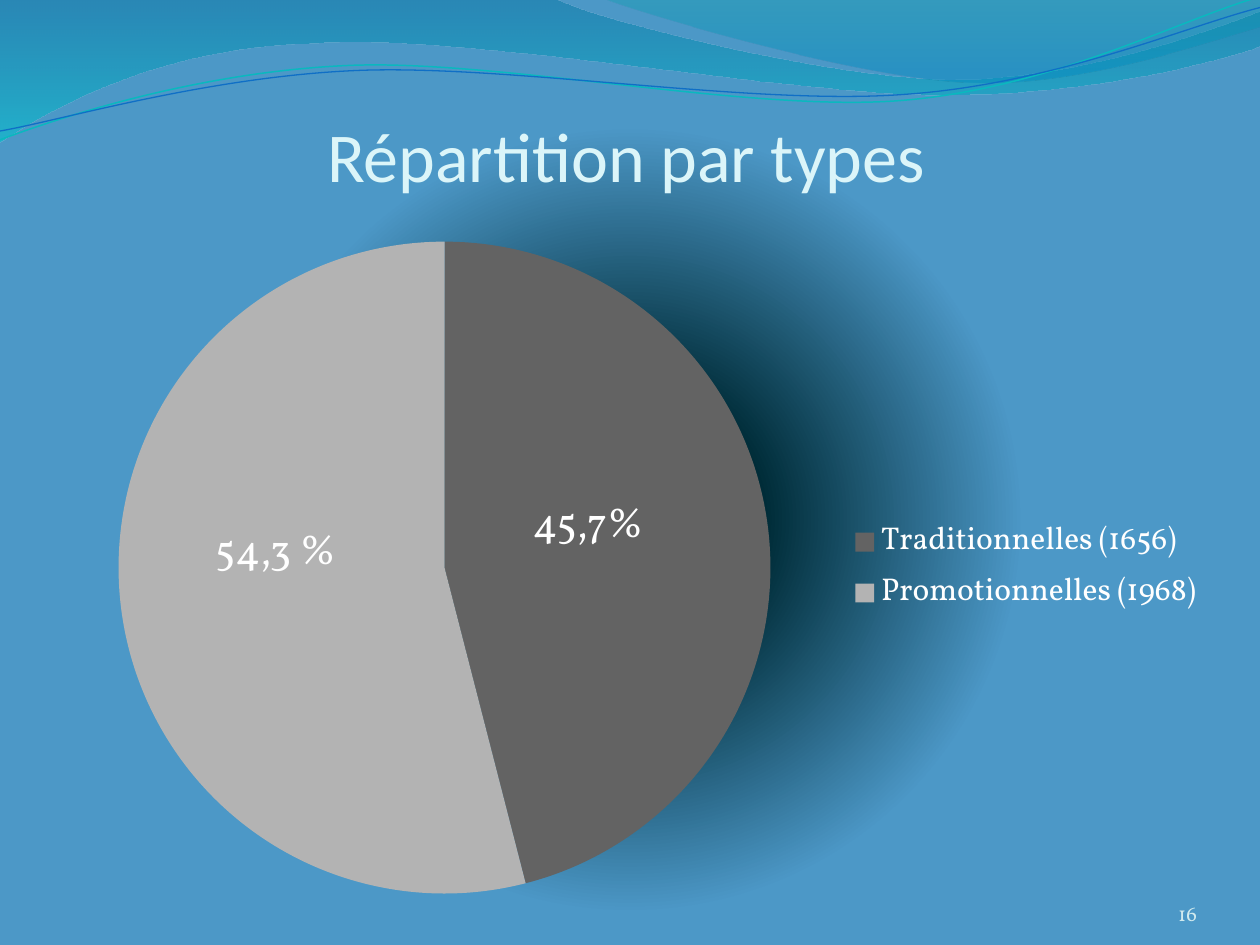
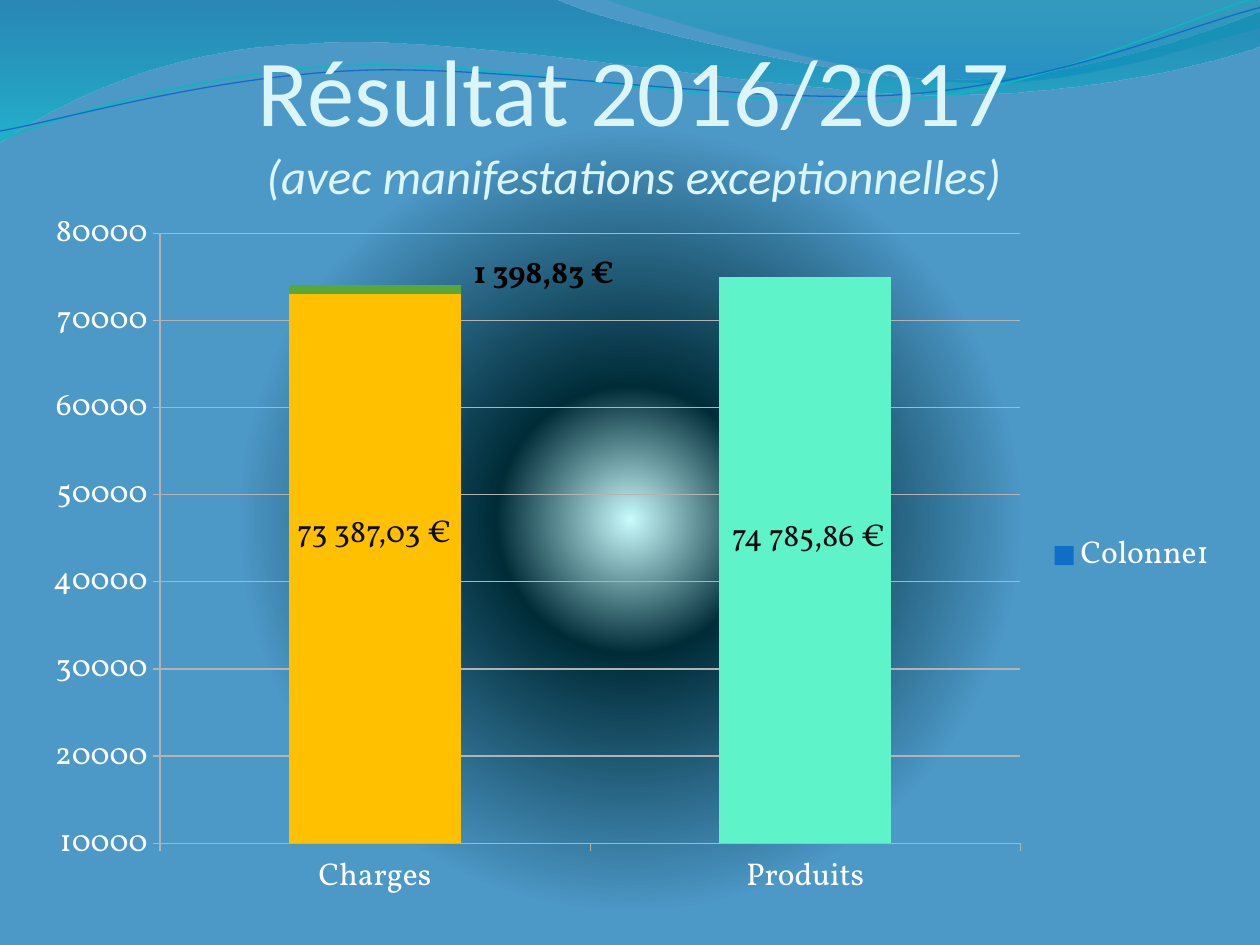
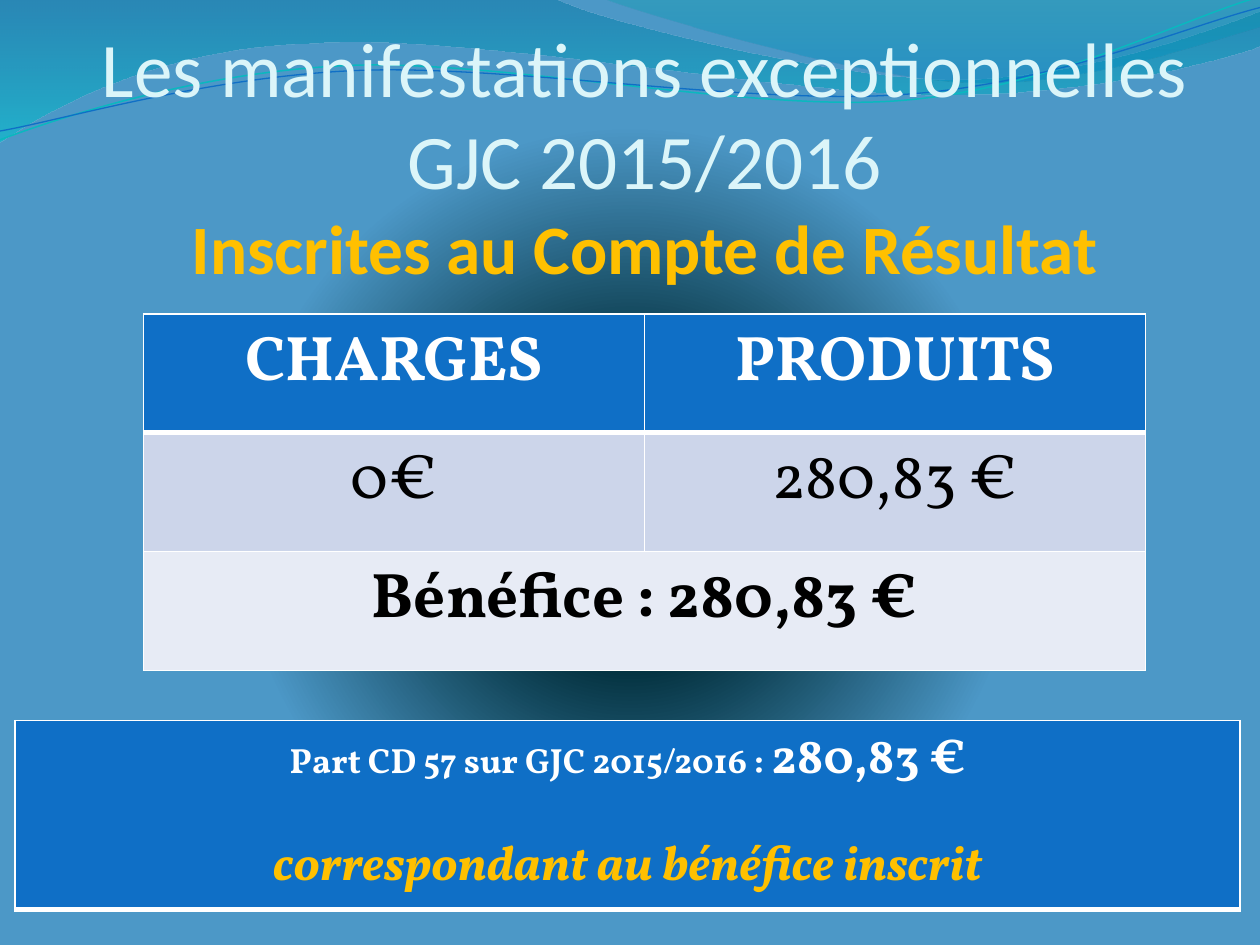
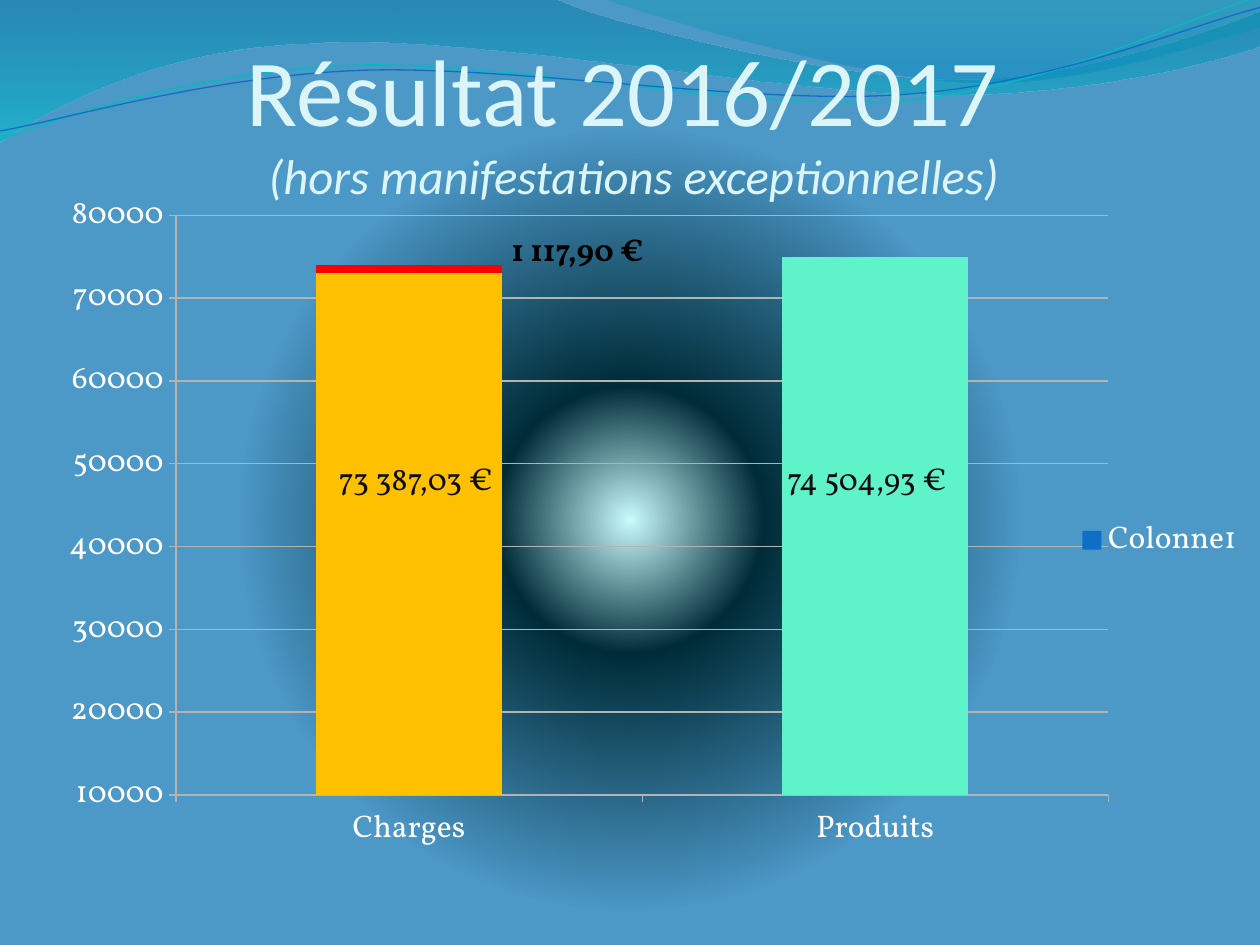
from lxml.etree import SubElement
from pptx import Presentation
from pptx.chart.data import CategoryChartData
from pptx.dml.color import RGBColor
from pptx.enum.chart import XL_CHART_TYPE, XL_LEGEND_POSITION, XL_TICK_MARK
from pptx.enum.text import MSO_ANCHOR, MSO_AUTO_SIZE, PP_ALIGN
from pptx.oxml.ns import qn
from pptx.util import Inches, Pt

HEADING_FONT = "Calibri"
BODY_FONT = "Vollkorn"
PALE = "DBF5F9"
WHITE = "FFFFFF"
BLACK = "000000"
NEAR_BLACK = "0D0D0D"
BLUE = "0F6FC6"
GOLD = "FFC000"
MINT = "5FF3CA"
GREEN = "55A839"
RED = "FF0000"
GRID_GREY = "B3B3B3"
PIE_GREYS = ["636363", "B3B3B3"]

BACKGROUND_STOPS = [(0, "C9FAFC", 100), (17, "002C38", 100), (50, "4C98C7", 100)]
BANDS = [
    ((0, 0), [
        [(4.4, -0.01)],
        [(4.76, 0.17), (6.64, 0.63), (7.58, 0.63)],
        [(8.53, 0.63), (9.58, 0.26), (10, 0.09)],
        [(10.01, 0.36)],
        [(9.83, 0.44), (8.7, 0.76), (7.46, 0.75)],
        [(6.22, 0.75), (3.82, 0.28), (2.57, 0.34)],
        [(1.29, 0.36), (0.46, 0.83), (-0.01, 1.13)],
    ], [(0, "0074A1", 45), (100, "00C6CF", 55)]),
    ((4.79, -0.01), [
        [(5.09, 0.11), (6.82, 0.62), (7.69, 0.65)],
        [(8.56, 0.69), (9.61, 0.32), (10, 0.21)],
        [(10, 0)],
    ], [(0, "00A1A9", 30), (80, "008BBF", 45)]),
]
WAVES = [
    ((0, 1.11), [
        [(0.48, 0.93), (1.58, 0.57), (2.77, 0.52)],
        [(3.95, 0.47), (5.93, 0.89), (7.13, 0.8)],
        [(8.33, 0.71), (9.38, 0.15), (9.98, -0.02)],
    ], "0AB8BF", 0.85),
    ((0, 1.04), [
        [(0.47, 0.96), (1.64, 0.61), (2.83, 0.56)],
        [(4.03, 0.51), (5.97, 0.84), (7.17, 0.75)],
        [(8.36, 0.67), (9.41, 0.21), (10, 0.06)],
    ], BLUE, 0.75),
]


def color(hex_string):
    return RGBColor.from_string(hex_string)


def box(left, top, width, height):
    return Inches(left), Inches(top), Inches(width), Inches(height)


def fill_solid(fill, hex_string):
    fill.solid()
    fill.fore_color.rgb = color(hex_string)


def fill_gradient(fill, properties, stops, focus=None):
    fill.solid()
    solid = properties.find(qn("a:solidFill"))
    gradient = properties.makeelement(qn("a:gradFill"), {"rotWithShape": "1"})
    stop_list = SubElement(gradient, qn("a:gsLst"))
    for position, hex_string, opacity in stops:
        stop = SubElement(stop_list, qn("a:gs"), pos=str(position * 1000))
        tint = SubElement(stop, qn("a:srgbClr"), val=hex_string)
        if opacity < 100:
            SubElement(tint, qn("a:alpha"), val=str(opacity * 1000))
    if focus:
        radial = SubElement(gradient, qn("a:path"), {"path": "circle"})
        edges = {side: str(value * 1000) for side, value in zip("ltrb", focus)}
        SubElement(radial, qn("a:fillToRect"), edges)
    else:
        SubElement(gradient, qn("a:lin"), ang="5400000", scaled="1")
    properties.replace(solid, gradient)


def add_curve(slide, start, segments, close):
    builder = slide.shapes.build_freeform(Inches(start[0]), Inches(start[1]))
    points = [(Inches(x), Inches(y)) for segment in segments for x, y in segment]
    builder.add_line_segments(points, close=close)
    shape = builder.convert_to_shape()
    shape.shadow.inherit = False
    lines = iter(shape.element.xpath(".//a:lnTo"))
    for segment in segments:
        steps = [next(lines) for _ in segment]
        if len(steps) == 3:
            outline = steps[0].getparent()
            curve = outline.makeelement(qn("a:cubicBezTo"), {})
            outline.replace(steps[0], curve)
            for step in steps:
                curve.append(step[0])
            for step in steps[1:]:
                outline.remove(step)
    return shape


def decorate_master(presentation, slide):
    master = presentation.slide_master
    fill = master.background.fill
    fill.solid()
    properties = master.element.xpath(".//p:bgPr")[0]
    fill_gradient(fill, properties, BACKGROUND_STOPS, (10, 110, 10, 100))
    shapes = []
    for start, segments, stops in BANDS:
        band = add_curve(slide, start, segments, True)
        fill_gradient(band.fill, band.element.spPr, stops)
        band.line.fill.background()
        shapes.append(band)
    for start, segments, hex_string, width in WAVES:
        wave = add_curve(slide, start, segments, False)
        wave.fill.background()
        wave.line.color.rgb = color(hex_string)
        wave.line.width = Pt(width)
        shapes.append(wave)
    for index, shape in enumerate(shapes):
        shape.element.xpath(".//p:cNvPr")[0].set("id", str(100 + index))
        master.shapes.element.insert(2 + index, shape.element)


def add_run(paragraph, text, size, hex_string, font=BODY_FONT, bold=False, italic=False):
    run = paragraph.add_run()
    run.text = text
    run.font.name = font
    run.font.size = Pt(size)
    run.font.bold = bold
    run.font.italic = italic
    run.font.color.rgb = color(hex_string)


def set_title(slide, left, top, lines):
    title = slide.shapes.title
    title.left, title.top, title.width, title.height = box(left, top, 9, 1.25)
    frame = title.text_frame
    frame.auto_size = MSO_AUTO_SIZE.NONE
    frame.word_wrap = True
    frame.vertical_anchor = MSO_ANCHOR.BOTTOM
    frame.margin_left = frame.margin_right = frame.margin_bottom = 0
    frame.margin_top = Inches(0.05)
    paragraph = frame.paragraphs[0]
    paragraph.alignment = PP_ALIGN.CENTER
    for index, (text, size, hex_string, style) in enumerate(lines):
        if index:
            paragraph.add_line_break()
        add_run(paragraph, text, size, hex_string, HEADING_FONT, **style)


def add_label(slide, position, text, size, hex_string, bold=False, alignment=PP_ALIGN.LEFT):
    frame = slide.shapes.add_textbox(*box(*position)).text_frame
    frame.word_wrap = True
    frame.auto_size = MSO_AUTO_SIZE.SHAPE_TO_FIT_TEXT
    paragraph = frame.paragraphs[0]
    paragraph.alignment = alignment
    add_run(paragraph, text, size, hex_string, bold=bold)


def add_page_number(slide, number):
    frame = slide.shapes.add_textbox(*box(8.67, 6.95, 0.83, 0.4)).text_frame
    frame.word_wrap = True
    frame.vertical_anchor = MSO_ANCHOR.BOTTOM
    frame.margin_left = frame.margin_right = frame.margin_top = frame.margin_bottom = 0
    frame.paragraphs[0].alignment = PP_ALIGN.RIGHT
    add_run(frame.paragraphs[0], number, 12, "D1EAEE")


def add_chart(slide, chart_type, position, categories, series):
    data = CategoryChartData()
    data.categories = categories
    for name, values in series:
        data.add_series(name, values)
    chart = slide.shapes.add_chart(chart_type, *box(*position), data).chart
    chart.has_title = False
    chart.font.name = BODY_FONT
    chart.font.size = Pt(18)
    chart.font.color.rgb = color(WHITE)
    chart.has_legend = True
    chart.legend.position = XL_LEGEND_POSITION.RIGHT
    chart.legend.include_in_layout = False
    return chart


def color_points(series, hex_strings):
    for index, hex_string in enumerate(hex_strings):
        fill_solid(series.points[index].format.fill, hex_string)


def add_pie(slide):
    categories = ["Traditionnelles (1656)", "Promotionnelles (1968)"]
    chart = add_chart(slide, XL_CHART_TYPE.PIE, (0.35, 1.78, 9.31, 5.45),
                      categories, [("Types", [46, 54])])
    color_points(chart.plots[0].series[0], PIE_GREYS)


def find_legend(chart):
    return chart.element.xpath(".//c:legend")[0]


def hide_legend_entry(chart, index):
    legend = find_legend(chart)
    hidden = legend.makeelement(qn("c:legendEntry"), {})
    SubElement(hidden, qn("c:idx"), val=str(index))
    SubElement(hidden, qn("c:delete"), val="1")
    legend.find(qn("c:legendPos")).addnext(hidden)


def make_layout(parent, settings):
    for layout in parent.findall(qn("c:layout")):
        parent.remove(layout)
    layout = parent.makeelement(qn("c:layout"), {})
    manual = SubElement(layout, qn("c:manualLayout"))
    for name, value in settings:
        SubElement(manual, qn("c:" + name), val=str(value))
    return layout


def set_plot_layout(chart, left, top, width, height):
    plot_area = chart.element.xpath(".//c:plotArea")[0]
    settings = [("layoutTarget", "inner"), ("xMode", "edge"), ("yMode", "edge"),
                ("x", left), ("y", top), ("w", width), ("h", height)]
    plot_area.insert(0, make_layout(plot_area, settings))


def set_legend_layout(chart, left, top):
    legend = find_legend(chart)
    settings = [("xMode", "edge"), ("yMode", "edge"), ("x", left), ("y", top)]
    layout = make_layout(legend, settings)
    legend.find(qn("c:legendEntry")).addnext(layout)


def add_result_columns(slide, position, totals, differences, difference_color):
    chart = add_chart(slide, XL_CHART_TYPE.COLUMN_STACKED, position, ["Charges", "Produits"],
                      [("Colonne1", totals), ("Différence", differences)])
    plot = chart.plots[0]
    plot.gap_width = 150
    plot.overlap = 100
    plot.vary_by_categories = False
    for series, hex_string in zip(plot.series, [BLUE, difference_color]):
        fill_solid(series.format.fill, hex_string)
        series.invert_if_negative = False
    color_points(plot.series[0], [GOLD, MINT])
    value_axis = chart.value_axis
    value_axis.minimum_scale = 10000
    value_axis.maximum_scale = 80000
    value_axis.major_unit = 10000
    value_axis.has_major_gridlines = True
    for axis in (chart.category_axis, value_axis):
        axis.major_tick_mark = XL_TICK_MARK.OUTSIDE
        axis.minor_tick_mark = XL_TICK_MARK.NONE
        axis.tick_labels.number_format = "General"
        axis.tick_labels.number_format_is_linked = False
    for line in (value_axis.major_gridlines.format.line, value_axis.format.line,
                 chart.category_axis.format.line):
        line.color.rgb = color(GRID_GREY)
        line.width = Pt(0.75)
    hide_legend_entry(chart, 1)
    return chart


def style_cell(cell, hex_string, top=1, bottom=1):
    properties = cell._tc.get_or_add_tcPr()
    for side, width in (("L", 1), ("R", 1), ("T", top), ("B", bottom)):
        line = SubElement(properties, qn("a:ln" + side), w=str(Pt(width)))
        fill = SubElement(line, qn("a:solidFill"))
        SubElement(fill, qn("a:srgbClr"), val=WHITE)
    fill_solid(cell.fill, hex_string)


def add_balance_table(slide):
    table = slide.shapes.add_table(3, 2, *box(1.14, 2.49, 7.95, 2.83)).table
    rows = [
        (["CHARGES", "PRODUITS"], BLUE, WHITE, True, 1, 3),
        (["0€", "280,83 €"], "CCD5EA", BLACK, False, 3, 1),
        (["Bénéfice : 280,83 €", ""], "E7EBF5", BLACK, True, 1, 1),
    ]
    table.cell(2, 0).merge(table.cell(2, 1))
    for row, (texts, fill, font_color, bold, top, bottom) in enumerate(rows):
        for column, text in enumerate(texts):
            cell = table.cell(row, column)
            style_cell(cell, fill, top, bottom)
            if text:
                paragraph = cell.text_frame.paragraphs[0]
                paragraph.alignment = PP_ALIGN.CENTER
                add_run(paragraph, text, 36, font_color, bold=bold)


def add_share_table(slide):
    table = slide.shapes.add_table(1, 1, *box(0.12, 5.72, 9.72, 1.5)).table
    cell = table.cell(0, 0)
    style_cell(cell, BLUE, bottom=3)
    share = cell.text_frame.paragraphs[0]
    add_run(share, "Part CD 57 sur GJC 2015/2016 : ", 20, WHITE, bold=True)
    add_run(share, "280,83 €", 28, WHITE, bold=True)
    origin = cell.text_frame.add_paragraph()
    origin.space_before = Pt(22)
    add_run(origin, "correspondant au bénéfice inscrit", 28, GOLD, bold=True, italic=True)
    for paragraph in (share, origin):
        paragraph.alignment = PP_ALIGN.CENTER


def build_types_slide(slide):
    add_pie(slide)
    set_title(slide, 0.47, 0.31, [("Répartition par types", 40, PALE, {})])
    add_label(slide, (1.61, 4.1, 1.42, 0.5), "54,3 %", 24, WHITE)
    add_label(slide, (4.13, 3.88, 1.3, 0.5), "45,7%", 24, WHITE)
    add_page_number(slide, "16")


def set_result_title(slide, heading, subtitle):
    set_title(slide, 0.53, 0.37, [(heading, 54, PALE, {}),
                                  (subtitle, 27.9, PALE, {"italic": True})])


def build_full_result_slide(slide):
    set_result_title(slide, "Résultat 2016/2017", "(avec manifestations exceptionnelles)")
    add_result_columns(slide, (0.23, 1.56, 9.53, 5.7), [73000, 75000], [1000, -75000], GREEN)
    add_label(slide, (3.66, 1.95, 1.65, 0.4), "1 398,83 €", 18, BLACK, bold=True)
    add_label(slide, (5.71, 4.04, 1.56, 0.4), "74 785,86 €", 18, NEAR_BLACK)
    add_label(slide, (2.26, 4.01, 1.63, 0.4), "73 387,03 €", 18, NEAR_BLACK)


def build_events_slide(slide):
    set_title(slide, 0.62, 1.04, [
        ("Les manifestations exceptionnelles GJC 2015/2016", 44.1, PALE, {}),
        ("Inscrites au Compte de Résultat", 39.6, GOLD, {"bold": True}),
    ])
    add_balance_table(slide)
    add_share_table(slide)


def build_ordinary_result_slide(slide):
    set_result_title(slide, "Résultat 2016/2017 ", "(hors manifestations exceptionnelles)")
    chart = add_result_columns(slide, (0.34, 1.5, 9.61, 5.26), [73000, 75000], [1000, None], RED)
    set_plot_layout(chart, 0.11, 0.04, 0.77, 0.88)
    set_legend_layout(chart, 0.85, 0.49)
    add_label(slide, (3.96, 1.78, 1.65, 0.4), "1 117,90 €", 18, BLACK, bold=True)
    add_label(slide, (6.1, 3.59, 1.56, 0.4), "74 504,93 €", 18, NEAR_BLACK,
              alignment=PP_ALIGN.CENTER)
    add_label(slide, (2.48, 3.59, 1.64, 0.4), "73 387,03 €", 18, NEAR_BLACK,
              alignment=PP_ALIGN.CENTER)


def main():
    presentation = Presentation()
    presentation.slide_width = Inches(10)
    presentation.slide_height = Inches(7.5)
    title_only = presentation.slide_layouts[5]
    builders = [build_types_slide, build_full_result_slide,
                build_events_slide, build_ordinary_result_slide]
    slides = [presentation.slides.add_slide(title_only) for _ in builders]
    decorate_master(presentation, slides[0])
    for builder, slide in zip(builders, slides):
        builder(slide)
    presentation.save("out.pptx")


if __name__ == "__main__":
    main()
